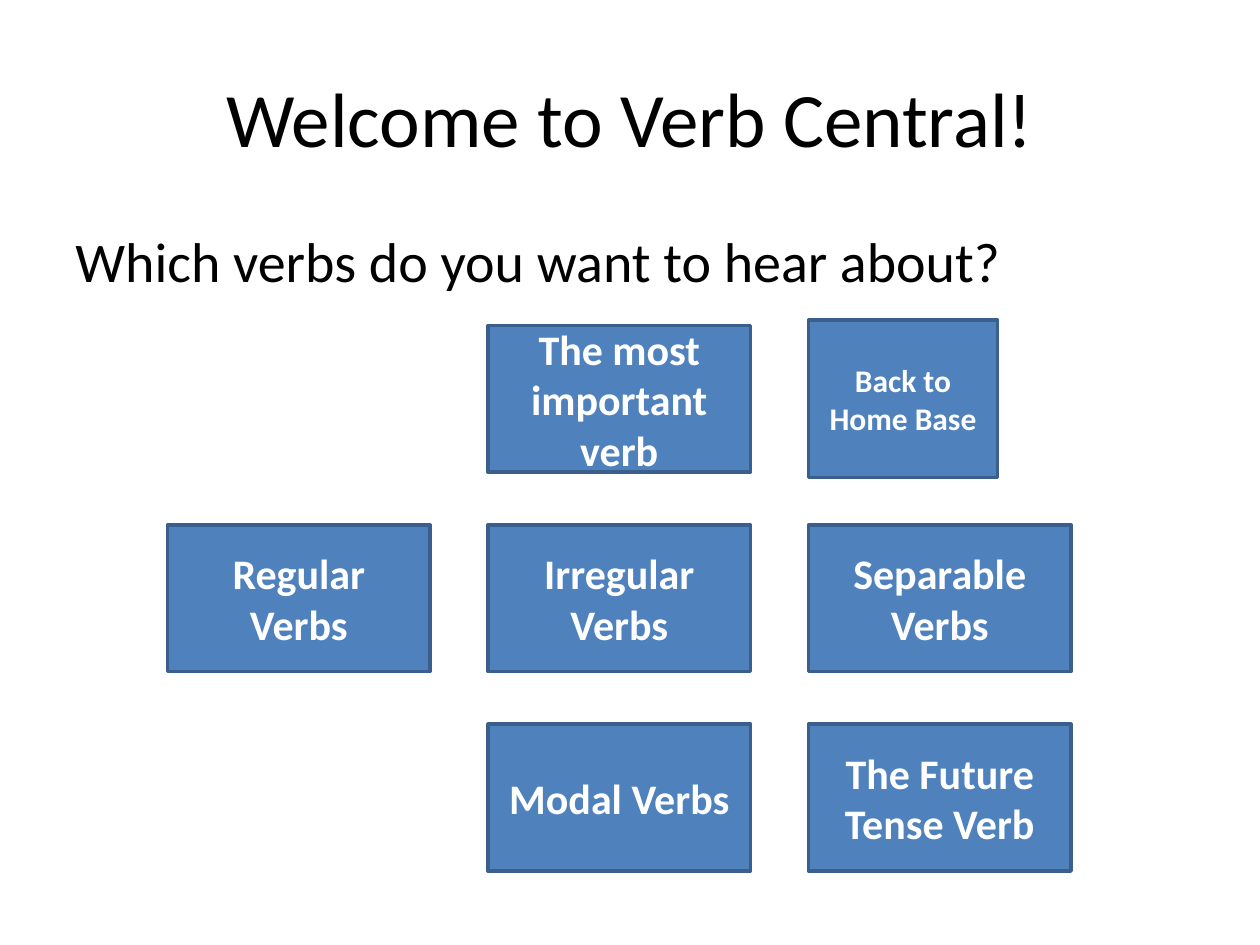
from dataclasses import dataclass

from pptx import Presentation
from pptx.dml.color import RGBColor
from pptx.enum.shapes import MSO_SHAPE as Kind
from pptx.enum.text import MSO_ANCHOR as Anchor, PP_ALIGN as Align
from pptx.shapes.autoshape import Shape
from pptx.slide import Slide
from pptx.util import Cm, Pt

LEFT, TOP = 3.38, 6.56
STEP_X, STEP_Y = 6.46, 4.02
WIDE, HIGH = 5.29, 2.96


@dataclass
class Button:
    text: str
    col: int
    row: int
    wide: float = WIDE
    high: float = HIGH
    size: int = 24


@dataclass
class Label:
    text: str
    top: float
    high: float
    size: int
    align: Align
    anchor: Anchor


LABELS = [
    Label("Welcome to Verb Central!", 0.76, 3.18, 44, Align.CENTER, Anchor.MIDDLE),
    Label("Which verbs do you want to hear about?", 4.45, 1.7, 32, Align.LEFT, Anchor.TOP),
]
BUTTONS = [
    Button("Regular Verbs", 0, 1),
    Button("Irregular Verbs", 1, 1),
    Button("Separable Verbs", 2, 1),
    Button("Modal Verbs", 1, 2),
    Button("The most important verb", 1, 0),
    Button("Back to Home Base", 2, 0, 3.81, 3.18, 18),
    Button("The Future Tense Verb", 2, 2),
]


def paint(code: str) -> RGBColor:
    return RGBColor.from_string(code)


def write(shape: Shape, text: str, size: int, color: str, bold: bool,
          align: Align, anchor: Anchor) -> None:
    frame = shape.text_frame
    frame.word_wrap = True
    frame.vertical_anchor = anchor
    line = frame.paragraphs[0]
    line.alignment = align
    run = line.add_run()
    run.text = text
    style = {"name": "Calibri", "size": Pt(size), "bold": bold}
    for key, value in style.items():
        setattr(run.font, key, value)
    run.font.color.rgb = paint(color)


def draw_label(slide: Slide, label: Label) -> None:
    box = slide.shapes.add_textbox(Cm(1.27), Cm(label.top), Cm(22.86), Cm(label.high))
    write(box, label.text, label.size, "000000", False, label.align, label.anchor)


def draw_button(slide: Slide, button: Button) -> None:
    left = LEFT + button.col * STEP_X
    top = TOP + button.row * STEP_Y + (HIGH - button.high) / 2
    shape = slide.shapes.add_shape(
        Kind.ACTION_BUTTON_CUSTOM, Cm(left), Cm(top), Cm(button.wide), Cm(button.high))
    shape.shadow.inherit = False
    shape.fill.solid()
    shape.fill.fore_color.rgb = paint("4F81BD")
    shape.line.color.rgb = paint("3A5F8C")
    shape.line.width = Pt(2)
    write(shape, button.text, button.size, "FFFFFF", True, Align.CENTER, Anchor.MIDDLE)


def main() -> None:
    deck = Presentation()
    deck.slide_width, deck.slide_height = Cm(25.4), Cm(19.05)
    slide = deck.slides.add_slide(deck.slide_layouts[6])
    for label in LABELS:
        draw_label(slide, label)
    for button in BUTTONS:
        draw_button(slide, button)
    deck.save("out.pptx")


if __name__ == "__main__":
    main()
